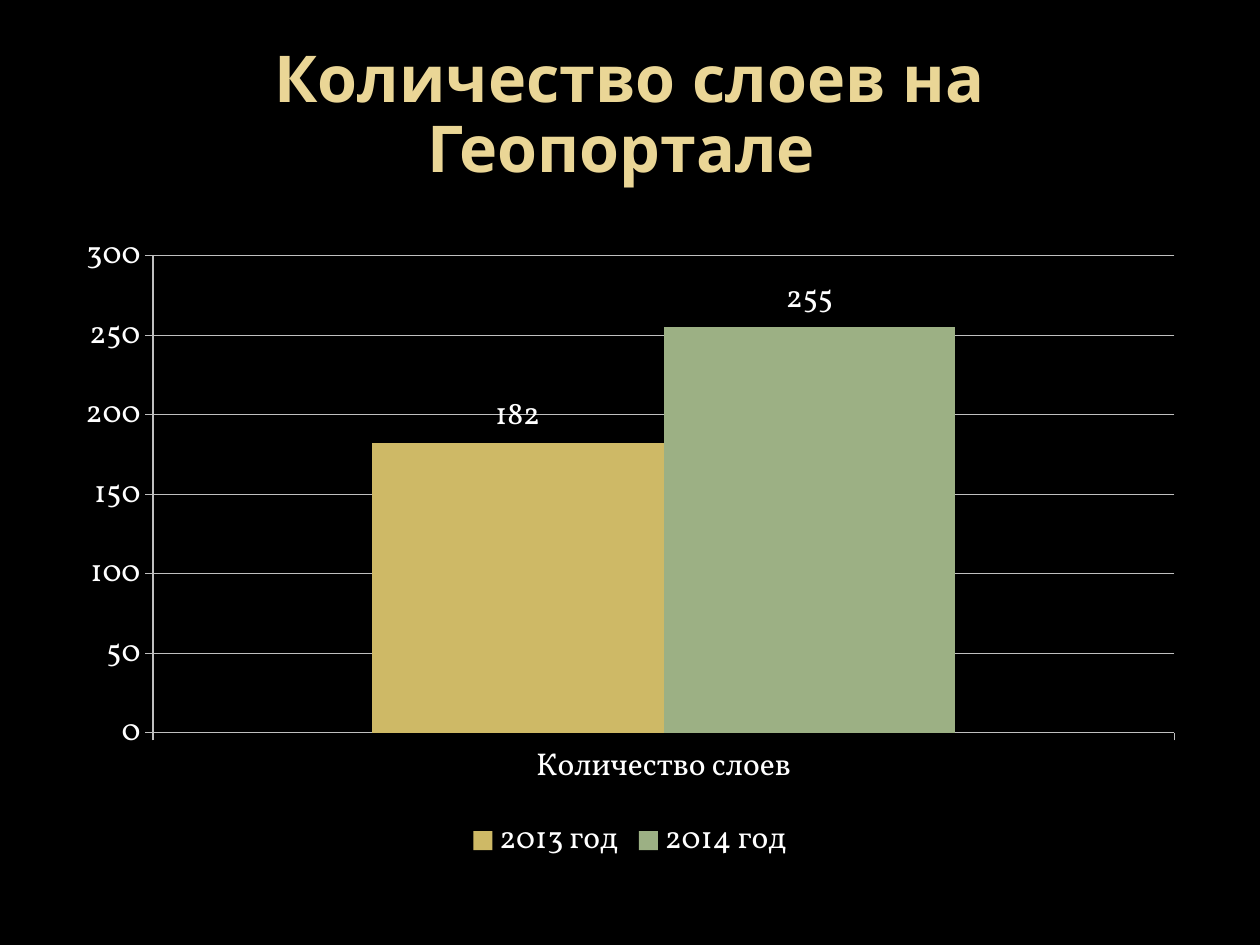
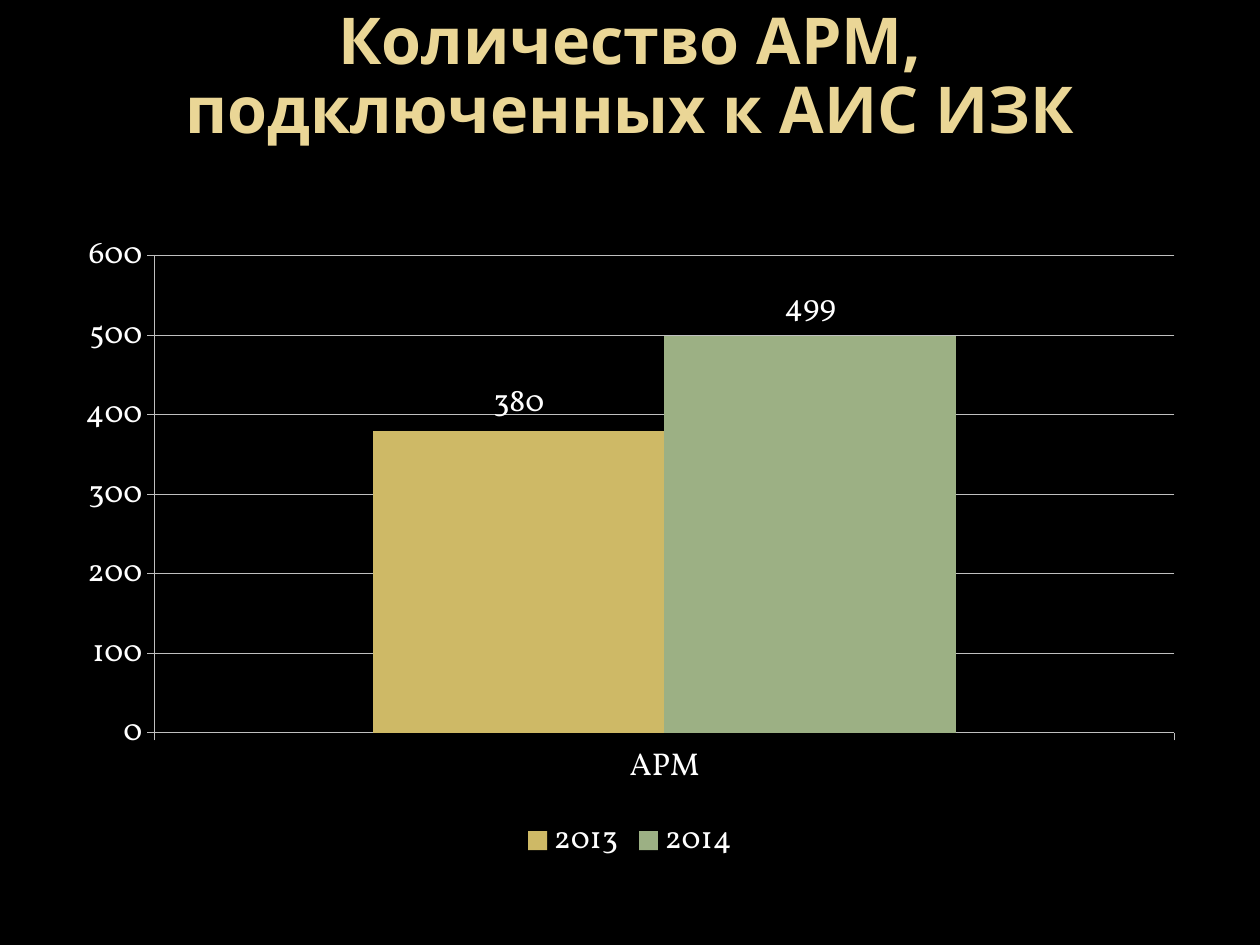
"""Builds two chart slides comparing the yearly figures of a land information system."""
from pptx import Presentation
from pptx.chart.data import CategoryChartData
from pptx.dml.color import RGBColor
from pptx.enum.chart import XL_CHART_TYPE as ChartType
from pptx.enum.chart import XL_LABEL_POSITION as LabelPosition
from pptx.enum.chart import XL_LEGEND_POSITION as LegendPosition
from pptx.enum.chart import XL_TICK_MARK as TickMark
from pptx.enum.text import MSO_ANCHOR as Anchor
from pptx.enum.text import PP_ALIGN as Align
from pptx.util import Pt

BACKGROUND = "000000"
TITLE_COLOR = "EAD696"
TEXT_COLOR = "FFFFFF"
LINE_COLOR = "BFBFBF"
SERIES_COLORS = ("CEB966", "9CB084")
TITLE_FONT = "Noto Sans"
CHART_FONT = "Vollkorn"

TITLE_BOX = (36, 21.6, 648, 90)
RAISED_TITLE_BOX = (36, -0.4, 648, 90)
CHART_BOX = (36, 126, 648, 370.8)

SLIDES = [
    {
        "title": "Количество слоев на Геопортале ",
        "title_box": TITLE_BOX,
        "category": "Количество слоев",
        "values": {"2013 год": 182, "2014 год": 255},
        "axis_step": 50,
    },
    {
        "title": "Количество АРМ, подключенных к АИС ИЗК",
        "title_box": RAISED_TITLE_BOX,
        "category": "АРМ",
        "values": {"2013": 380, "2014": 499},
        "axis_step": 100,
    },
]


def color(hex_string):
    """Turn a hex string into a colour."""
    return RGBColor.from_string(hex_string)


def paint(fill, hex_string):
    """Give a fill one solid colour."""
    fill.solid()
    fill.fore_color.rgb = color(hex_string)


def add_title(slide, box, text):
    """Add the centred, bold slide title."""
    frame = slide.shapes.add_textbox(*map(Pt, box)).text_frame
    frame.word_wrap = True
    frame.vertical_anchor = Anchor.MIDDLE
    frame.margin_left = frame.margin_right = Pt(20)
    paragraph = frame.paragraphs[0]
    paragraph.text = text
    paragraph.alignment = Align.CENTER
    paragraph.line_spacing = 0.9
    paragraph.font.name = TITLE_FONT
    paragraph.font.size = Pt(36.9)
    paragraph.font.bold = True
    paragraph.font.color.rgb = color(TITLE_COLOR)


def style_axis(axis):
    """Give an axis its thin line and outer ticks."""
    axis.major_tick_mark = TickMark.OUTSIDE
    axis.minor_tick_mark = TickMark.NONE
    axis.format.line.width = Pt(0.75)
    axis.format.line.color.rgb = color(LINE_COLOR)


def add_year_chart(slide, box, category, values, axis_step):
    """Add a column chart with one labelled column for each year."""
    data = CategoryChartData()
    data.categories = [category]
    for year, value in values.items():
        data.add_series(year, [value])
    chart = slide.shapes.add_chart(
        ChartType.COLUMN_CLUSTERED, *map(Pt, box), data
    ).chart
    chart.has_title = False
    chart.font.name = CHART_FONT
    chart.font.size = Pt(18)
    chart.font.color.rgb = color(TEXT_COLOR)

    chart.has_legend = True
    chart.legend.position = LegendPosition.BOTTOM
    chart.legend.include_in_layout = False

    value_axis = chart.value_axis
    style_axis(chart.category_axis)
    style_axis(value_axis)
    value_axis.minimum_scale = 0
    value_axis.maximum_scale = 6 * axis_step
    value_axis.major_unit = axis_step
    value_axis.has_major_gridlines = True
    gridline = value_axis.major_gridlines.format.line
    gridline.width = Pt(0.75)
    gridline.color.rgb = color(LINE_COLOR)

    plot = chart.plots[0]
    plot.vary_by_categories = False
    plot.gap_width = 150
    plot.overlap = 0
    plot.has_data_labels = True
    plot.data_labels.show_value = True
    plot.data_labels.position = LabelPosition.OUTSIDE_END
    for series, series_color in zip(plot.series, SERIES_COLORS):
        paint(series.format.fill, series_color)


def add_chart_slide(presentation, title, title_box, category, values, axis_step):
    """Add a black slide with a title above a chart."""
    slide = presentation.slides.add_slide(presentation.slide_layouts[6])
    paint(slide.background.fill, BACKGROUND)
    add_title(slide, title_box, title)
    add_year_chart(slide, CHART_BOX, category, values, axis_step)


def main():
    """Build and save the presentation."""
    presentation = Presentation()
    presentation.slide_width = Pt(720)
    presentation.slide_height = Pt(540)
    for content in SLIDES:
        add_chart_slide(presentation, **content)
    presentation.save("out.pptx")


if __name__ == "__main__":
    main()
